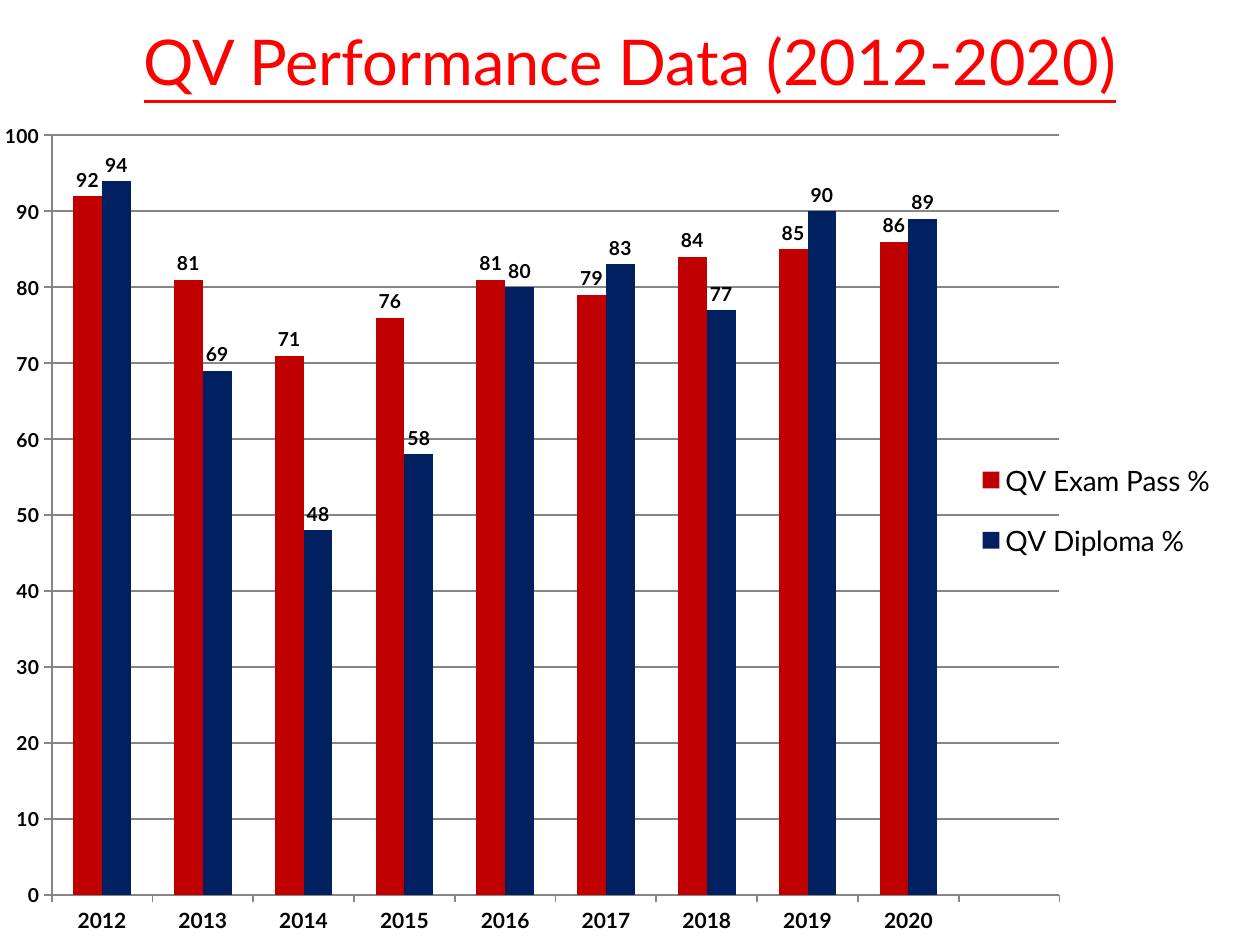
from dataclasses import dataclass

from lxml.etree import SubElement
from pptx import Presentation
from pptx.chart.data import CategoryChartData
from pptx.dml.color import RGBColor
from pptx.enum.chart import XL_CHART_TYPE, XL_LABEL_POSITION, XL_LEGEND_POSITION, XL_TICK_MARK
from pptx.enum.text import MSO_ANCHOR, MSO_AUTO_SIZE, PP_ALIGN
from pptx.oxml.ns import qn
from pptx.util import Cm, Pt


@dataclass(frozen=True)
class Theme:
    """Colours, font and type sizes of the slide."""
    font: str = "Lato"
    title: str = "FF0000"
    text: str = "000000"
    exam: str = "C00000"
    diploma: str = "002060"
    line: str = "868686"
    title_size: int = 36
    legend_size: int = 16
    category_size: int = 12
    value_size: int = 11
    chart_size: int = 10


class SlideBuilder:
    """Adds styled elements to the current slide."""

    def __init__(self, prs, theme):
        """Start a title-only slide."""
        self.theme = theme
        self.s = prs.slides.add_slide(prs.slide_layouts[5])

    def style_font(self, font, size, color, bold=False):
        """Apply the theme font with a size, colour and weight."""
        font.name = self.theme.font
        font.size = Pt(size)
        font.bold = bold
        font.color.rgb = RGBColor.from_string(color)

    def title(self, text, left, top, width, height):
        """Place and format the title placeholder."""
        sp = self.s.shapes.title
        sp.left, sp.top, sp.width, sp.height = map(Cm, (left, top, width, height))
        tf = sp.text_frame
        tf.text = text
        tf.word_wrap = True
        tf.auto_size = MSO_AUTO_SIZE.NONE
        tf.vertical_anchor = MSO_ANCHOR.BOTTOM
        p = tf.paragraphs[0]
        p.alignment = PP_ALIGN.CENTER
        r = p.runs[0]
        self.style_font(r.font, self.theme.title_size, self.theme.title)
        r.font.underline = True

    def set_layout(self, parent, index, box, inner=False):
        """Fix a chart part at x, y, width and height fractions."""
        for old in parent.findall(qn("c:layout")):
            parent.remove(old)
        layout = SubElement(parent, qn("c:layout"))
        parent.insert(index, layout)
        manual = SubElement(layout, qn("c:manualLayout"))
        settings = [("layoutTarget", "inner")] if inner else []
        settings += [("xMode", "edge"), ("yMode", "edge"), *zip("xywh", box)]
        for tag, value in settings:
            SubElement(manual, qn(f"c:{tag}")).set("val", str(value))

    def style_axis(self, axis, size):
        """Format an axis line, its ticks and its labels."""
        axis.major_tick_mark = XL_TICK_MARK.OUTSIDE
        axis.minor_tick_mark = XL_TICK_MARK.NONE
        self.style_line(axis.format.line)
        self.style_font(axis.tick_labels.font, size, self.theme.text, bold=True)

    def style_line(self, line):
        """Give a chart line the theme colour."""
        line.color.rgb = RGBColor.from_string(self.theme.line)
        line.width = Pt(1)

    def column_chart(self, categories, series, left, top, width, height):
        """Add a clustered column chart from (name, values, colour) series."""
        t = self.theme
        data = CategoryChartData()
        data.categories = categories
        for name, values, _ in series:
            data.add_series(name, values)
        chart = self.s.shapes.add_chart(
            XL_CHART_TYPE.COLUMN_CLUSTERED, *map(Cm, (left, top, width, height)), data
        ).chart
        chart.has_title = False
        self.style_font(chart.font, t.chart_size, t.text)

        self.style_axis(chart.category_axis, t.category_size)
        axis = chart.value_axis
        self.style_axis(axis, t.value_size)
        axis.minimum_scale, axis.maximum_scale, axis.major_unit = 0, 100, 10
        axis.has_major_gridlines = True
        self.style_line(axis.major_gridlines.format.line)

        plot = chart.plots[0]
        plot.gap_width, plot.overlap, plot.vary_by_categories = 150, 0, False
        for ser, (_, _, color) in zip(plot.series, series):
            ser.format.fill.solid()
            ser.format.fill.fore_color.rgb = RGBColor.from_string(color)
            labels = ser.data_labels
            labels.show_value = True
            labels.position = XL_LABEL_POSITION.OUTSIDE_END
            self.style_font(labels.font, t.value_size, t.text, bold=True)

        chart.has_legend = True
        chart.legend.position = XL_LEGEND_POSITION.RIGHT
        chart.legend.include_in_layout = False
        self.style_font(chart.legend.font, t.legend_size, t.text)
        root = chart.element
        self.set_layout(root.find(f".//{qn('c:plotArea')}"), 0, (0.041, 0.013, 0.8, 0.926), True)
        self.set_layout(root.find(f".//{qn('c:legend')}"), 1, (0.77, 0.38, 0.2, 0.18))


def main():
    """Build and save the performance slide."""
    prs = Presentation()
    prs.slide_width, prs.slide_height = Cm(25.4), Cm(19.05)
    theme = Theme()
    b = SlideBuilder(prs, theme)
    b.title("QV Performance Data (2012-2020)", 1.52, 0.48, 22.35, 1.63)
    years = [str(year) for year in range(2012, 2021)] + [""]
    b.column_chart(
        years,
        [
            ("QV Exam Pass %", (92, 81, 71, 76, 81, 79, 84, 85, 86, None), theme.exam),
            ("QV Diploma %", (94, 69, 48, 58, 80, 83, 77, 90, 89, None), theme.diploma),
        ],
        0, 2.49, 25.4, 16.56,
    )
    prs.save("out.pptx")


if __name__ == "__main__":
    main()
